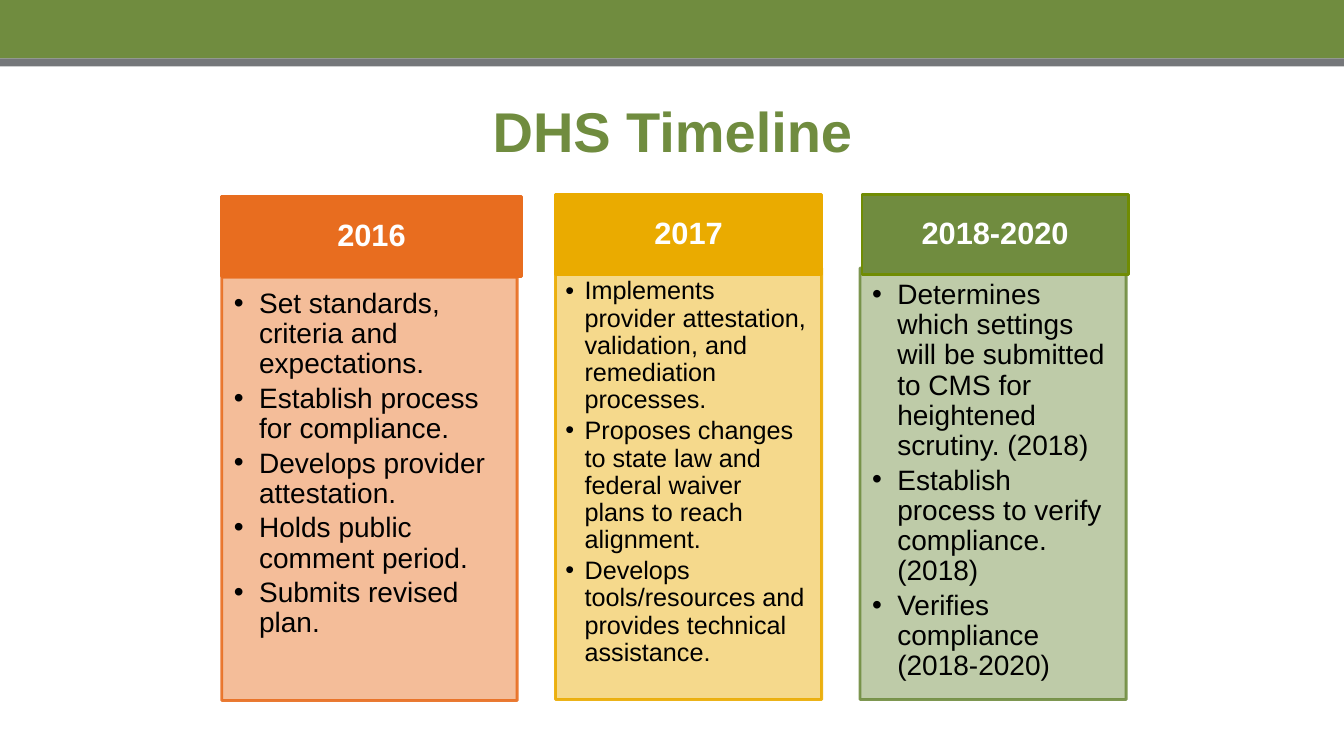
from lxml.etree import SubElement
from pptx import Presentation
from pptx.dml.color import RGBColor
from pptx.enum.shapes import MSO_SHAPE
from pptx.enum.text import MSO_ANCHOR, PP_ALIGN
from pptx.oxml.ns import qn
from pptx.util import Inches, Pt

GREEN = RGBColor(0x70, 0x8C, 0x3F)
OLIVE = RGBColor(0x70, 0x8C, 0x03)
GRAY = RGBColor(0x75, 0x77, 0x7A)
ORANGE = RGBColor(0xE8, 0x6D, 0x1F)
GOLD = RGBColor(0xEA, 0xAB, 0x00)
WHITE = RGBColor(0xFF, 0xFF, 0xFF)
BLACK = RGBColor(0x00, 0x00, 0x00)

WIDTH = 13.33
COLUMNS = [
    {
        "year": "2016", "header": (2.2, 1.95, 2.97, 0.79), "body": (2.2, 2.75, 2.93, 4.2),
        "color": ORANGE, "edge": ORANGE, "size": 20, "indent": 0.25,
        "insets": (0.12, 0.12, 0.16, 0.17),
        "steps": [
            "Set standards, criteria and expectations.",
            "Establish process for compliance.",
            "Develops provider attestation.",
            "Holds public comment period.",
            "Submits revised plan.",
        ],
    },
    {
        "year": "2017", "header": (5.51, 1.93, 2.64, 0.79), "body": (5.51, 2.66, 2.64, 4.28),
        "color": GOLD, "edge": GOLD, "size": 18, "indent": 0.19,
        "insets": (0.1, 0.1, 0.14, 0.16),
        "steps": [
            "Implements provider attestation, validation, and remediation processes.",
            "Proposes changes to state law and federal waiver plans to reach alignment.",
            "Develops tools/resources and provides technical assistance.",
        ],
    },
    {
        "year": "2018-2020", "header": (8.55, 1.93, 2.64, 0.79), "body": (8.53, 2.66, 2.64, 4.28),
        "color": GREEN, "edge": OLIVE, "size": 20, "indent": 0.25,
        "insets": (0.12, 0.12, 0.16, 0.17),
        "steps": [
            "Determines which settings will be submitted to CMS for heightened scrutiny. (2018)",
            "Establish process to verify compliance. (2018)",
            "Verifies compliance (2018-2020)",
        ],
    },
]


class TimelineSlide:
    """Draws the timeline's elements on one slide in a shared style."""

    font = "Arial"
    line_width = 2

    def __init__(self, slide):
        self.slide = slide

    def set_format(self, target, values):
        for name, value in values.items():
            setattr(target, name, value)

    def set_alpha(self, parent, percent):
        color = parent.find(qn("a:solidFill"))[0]
        SubElement(color, qn("a:alpha")).set("val", str(percent * 1000))

    def box(self, place, color, edge=None, fill_alpha=100, line_alpha=100):
        shape = self.slide.shapes.add_shape(MSO_SHAPE.RECTANGLE, *map(Inches, place))
        shape.shadow.inherit = False
        shape.fill.solid()
        shape.fill.fore_color.rgb = color
        properties = shape._element.spPr
        if fill_alpha < 100:
            self.set_alpha(properties, fill_alpha)
        if edge is None:
            shape.line.fill.background()
            return shape
        shape.line.color.rgb = edge
        shape.line.width = Pt(self.line_width)
        if line_alpha < 100:
            self.set_alpha(properties.find(qn("a:ln")), line_alpha)
        return shape

    def fill_text(self, shape, lines, font, paragraph_format, anchor, insets):
        frame = shape.text_frame
        sides = ("margin_left", "margin_top", "margin_right", "margin_bottom")
        self.set_format(frame, dict(zip(sides, map(Inches, insets))))
        self.set_format(frame, {"word_wrap": True, "vertical_anchor": anchor})
        frame.text = "\n".join(lines)
        for paragraph in frame.paragraphs:
            self.set_format(paragraph, paragraph_format)
            run_font = paragraph.runs[0].font
            self.set_format(run_font, {"name": self.font, "size": Pt(font["size"]), "bold": font["bold"]})
            run_font.color.rgb = font["color"]

    def title(self, text, place):
        shape = self.slide.shapes.add_textbox(*map(Inches, place))
        self.fill_text(shape, [text], {"size": 40, "bold": True, "color": GREEN},
                       {"alignment": PP_ALIGN.CENTER}, MSO_ANCHOR.MIDDLE, (0.1, 0.05, 0.1, 0.05))

    def header(self, text, place, color, edge):
        shape = self.box(place, color, edge)
        self.fill_text(shape, [text], {"size": 22, "bold": True, "color": WHITE},
                       {"alignment": PP_ALIGN.CENTER, "line_spacing": 0.9},
                       MSO_ANCHOR.MIDDLE, (0.17, 0.1, 0.17, 0.1))

    def bullets(self, steps, place, color, size, indent, insets):
        shape = self.box(place, color, color, fill_alpha=45, line_alpha=90)
        self.fill_text(shape, steps, {"size": size, "bold": False, "color": BLACK},
                       {"alignment": PP_ALIGN.LEFT, "line_spacing": 0.9, "space_after": Pt(size * 0.15)},
                       MSO_ANCHOR.TOP, insets)
        for paragraph in shape.text_frame.paragraphs:
            properties = paragraph._p.get_or_add_pPr()
            properties.set("marL", str(Inches(indent)))
            properties.set("indent", str(-Inches(indent)))
            SubElement(properties, qn("a:buFont")).set("typeface", self.font)
            SubElement(properties, qn("a:buChar")).set("char", "•")

    def column(self, column):
        self.bullets(column["steps"], column["body"], column["color"],
                     column["size"], column["indent"], column["insets"])
        self.header(column["year"], column["header"], column["color"], column["edge"])


def main():
    presentation = Presentation()
    presentation.slide_width = Inches(WIDTH)
    presentation.slide_height = Inches(7.5)
    timeline = TimelineSlide(presentation.slides.add_slide(presentation.slide_layouts[6]))
    timeline.box((0, 0, WIDTH, 0.58), GREEN)
    timeline.box((0, 0.58, WIDTH, 0.08), GRAY)
    timeline.title("DHS Timeline", (0.67, 0.67, 12, 1.25))
    for column in COLUMNS:
        timeline.column(column)
    presentation.save("out.pptx")


if __name__ == "__main__":
    main()
